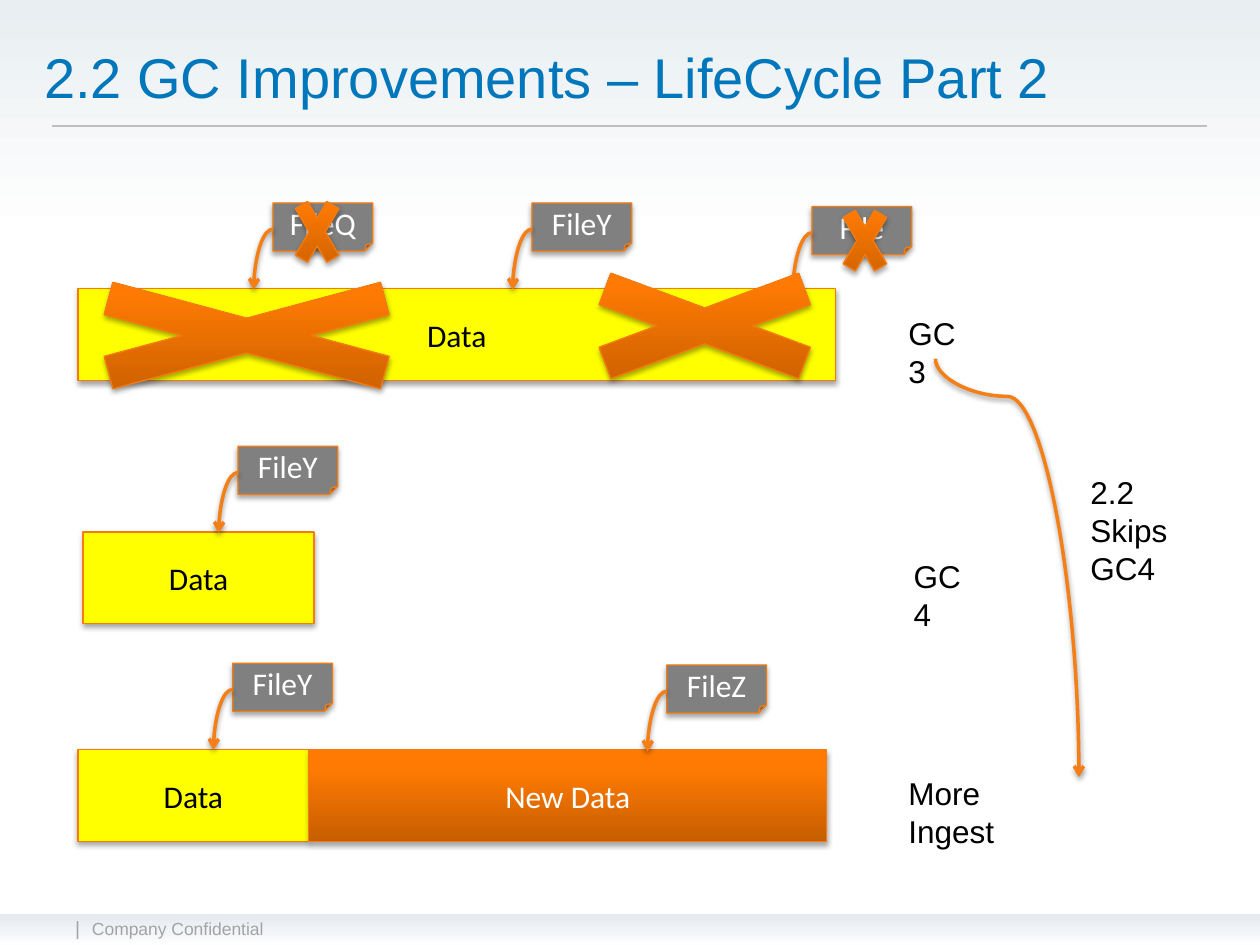
from lxml.etree import SubElement
from pptx import Presentation
from pptx.dml.color import RGBColor
from pptx.enum.shapes import MSO_CONNECTOR, MSO_SHAPE
from pptx.enum.text import MSO_ANCHOR, PP_ALIGN
from pptx.oxml import parse_xml
from pptx.oxml.ns import nsdecls, qn
from pptx.util import Pt

BLACK = RGBColor(0, 0, 0)
WHITE = RGBColor(255, 255, 255)
YELLOW = RGBColor(255, 255, 0)
GREY = RGBColor(0x80, 0x80, 0x80)
FOOTER = RGBColor(0xA3, 0xA3, 0xA3)
RULE = RGBColor(0xBF, 0xBF, 0xBF)
BLUE = RGBColor(0x00, 0x76, 0xBB)
EDGE = RGBColor(0xF4, 0x7C, 0x10)
ARROW = RGBColor(0xF4, 0x7F, 0x16)

# Gradients: angle in degrees, then (position in percent, colour)
PAGE = 90, [(0, "E8EEF1"), (25, "FFFFFF")]
BAND = 90, [(0, "E3E9EF"), (50, "F0F3F7"), (100, "FDFEFF")]
ORANGE = 270, [(0, "C65E00"), (80, "FF7A03"), (100, "FF7B04")]

BAR_H, TAG_W, TAG_H = 52.5, 57, 27.5
CROSS_W, CROSS_H = 34.5, 59

# bar: left, top, width; label: text, left, top, width
# files: name, left, top; crosses: left, top, width, height
STAGES = [
    {"bar": (44.5, 165, 433), "label": ("GC3", 512, 176, 44.5),
     "files": [("File", 464, 118), ("FileY", 304, 116), ("FileQ", 156, 116)],
     "crosses": [(477, 108, CROSS_W, CROSS_H), (164, 103, CROSS_W, CROSS_H),
                 (293, 145.5, 219.5, 81.5), (-11, 151, 304, 81.5)]},
    {"bar": (47.5, 304, 132), "label": ("GC4", 515, 315, 44.5),
     "files": [("FileY", 136, 255)], "crosses": []},
    {"bar": (44.5, 428.5, 132), "label": ("More Ingest", 512, 439, 104.5),
     "files": [("FileY", 133, 379)], "crosses": []},
]


def write(tf, text, size=18, font="Arial", color=BLACK, align=PP_ALIGN.LEFT,
          anchor=MSO_ANCHOR.TOP):
    tf.word_wrap = True
    tf.vertical_anchor = anchor
    for i, line in enumerate(text.split("\n")):
        p = tf.paragraphs[0] if i == 0 else tf.add_paragraph()
        p.alignment = align
        r = p.add_run()
        r.text = line
        r.font.size, r.font.name = Pt(size), font
        r.font.color.rgb = color


def add_text(shapes, text, x, y, w, h, **fmt):
    write(shapes.add_textbox(Pt(x), Pt(y), Pt(w), Pt(h)).text_frame, text, **fmt)


def add_shadow(sp, alpha, dist):
    props = sp.element.spPr
    for old in props.findall(qn("a:effectLst")):
        props.remove(old)
    props.append(parse_xml(
        f'<a:effectLst {nsdecls("a")}><a:outerShdw blurRad="{Pt(3.1)}" '
        f'dist="{Pt(dist)}" dir="5400000" rotWithShape="0"><a:srgbClr val="000000">'
        f'<a:alpha val="{alpha * 1000}"/></a:srgbClr></a:outerShdw></a:effectLst>'))


def set_gradient(sp, angle, stops):
    sp.fill.gradient()
    grad = sp.element.spPr.find(qn("a:gradFill"))
    gs_list = grad.find(qn("a:gsLst"))
    for gs in list(gs_list):
        gs_list.remove(gs)
    for pos, color in stops:
        gs = SubElement(gs_list, qn("a:gs"), pos=str(pos * 1000))
        SubElement(gs, qn("a:srgbClr"), val=color)
    grad.find(qn("a:lin")).set("ang", str(angle * 60000))


def add_box(shapes, kind, x, y, w, h, fill, text="", color=WHITE, edged=True):
    sp = shapes.add_shape(kind, Pt(x), Pt(y), Pt(w), Pt(h))
    sp.shadow.inherit = False
    if isinstance(fill, RGBColor):
        sp.fill.solid()
        sp.fill.fore_color.rgb = fill
    else:
        set_gradient(sp, *fill)
    if edged:
        sp.line.color.rgb, sp.line.width = EDGE, Pt(0.75)
        add_shadow(sp, 35, 1.8)
    else:
        sp.line.fill.background()
    if text:
        write(sp.text_frame, text, font="Calibri", color=color,
              align=PP_ALIGN.CENTER, anchor=MSO_ANCHOR.MIDDLE)


def add_arrow(shapes, x1, y1, x2, y2):
    cx = shapes.add_connector(MSO_CONNECTOR.CURVE, Pt(x1), Pt(y1), Pt(x2), Pt(y2))
    cx.line.color.rgb, cx.line.width = ARROW, Pt(2)
    SubElement(cx.line._get_or_add_ln(), qn("a:tailEnd"), type="arrow")
    add_shadow(cx, 38, 1.6)
    return cx


def add_file(shapes, name, x, y):
    """File tag with a quarter-curve arrow down to its data bar."""
    add_box(shapes, MSO_SHAPE.FOLDED_CORNER, x, y, TAG_W, TAG_H, GREY, name)
    cx = add_arrow(shapes, x, y + 15, x - 11, y + 49.5)
    cx.element.spPr.find(qn("a:prstGeom")).set("prst", "curvedConnector2")


def add_stage(shapes, stage):
    x, y, w = stage["bar"]
    add_box(shapes, MSO_SHAPE.RECTANGLE, x, y, w, BAR_H, YELLOW, "Data", BLACK)
    add_text(shapes, *stage["label"], 29)
    for file in stage["files"]:
        add_file(shapes, *file)
    for cross in stage["crosses"]:
        add_box(shapes, MSO_SHAPE.MATH_MULTIPLY, *cross, ORANGE)


def add_skip_arrow(shapes):
    """S-curve turned by 270 degrees, so that it leaves and arrives vertically."""
    cx = add_arrow(shapes, 695, 283.5, 456, 365.5)
    cx.element.spPr.find(qn("a:xfrm")).set("rot", str(270 * 60000))
    guides = cx.element.spPr.find(qn("a:prstGeom")).get_or_add_avLst()
    SubElement(guides, qn("a:gd"), name="adj1", fmla="val 9000")


def main():
    prs = Presentation()
    prs.slide_width, prs.slide_height = Pt(720), Pt(540)
    s = prs.slides.add_slide(prs.slide_layouts[5])
    shapes = s.shapes

    add_box(shapes, MSO_SHAPE.RECTANGLE, 0, 0, 720, 540, PAGE, edged=False)
    add_box(shapes, MSO_SHAPE.RECTANGLE, 0, 522, 720, 18, BAND, edged=False)
    add_text(shapes, "Company Confidential", 45.5, 521, 360, 34, size=10, color=FOOTER)
    add_text(shapes, "|", 36, 520, 14, 19.5, size=11, color=FOOTER)
    rule = shapes.add_connector(MSO_CONNECTOR.STRAIGHT, Pt(30), Pt(72), Pt(690), Pt(72))
    rule.line.color.rgb, rule.line.width = RULE, Pt(0.75)
    SubElement(rule.element.spPr, qn("a:effectLst"))

    title = shapes.title
    title.left, title.top, title.width, title.height = Pt(18), Pt(18), Pt(612), Pt(50.5)
    write(title.text_frame, "2.2 GC Improvements – LifeCycle Part 2", size=32,
          color=BLUE, anchor=MSO_ANCHOR.MIDDLE)
    title.element.getparent().append(title.element)  # in front of the background

    for stage in STAGES:
        add_stage(shapes.add_group_shape().shapes, stage)

    x, y, w = STAGES[-1]["bar"]
    add_box(shapes, MSO_SHAPE.RECTANGLE, x + w, y, 296, BAR_H, ORANGE, "New Data")
    add_file(shapes, "FileZ", 381, 380)
    add_skip_arrow(shapes)
    add_text(shapes, "2.2 Skips\nGC4", 616, 267, 79, 51)

    prs.save("out.pptx")


if __name__ == "__main__":
    main()
